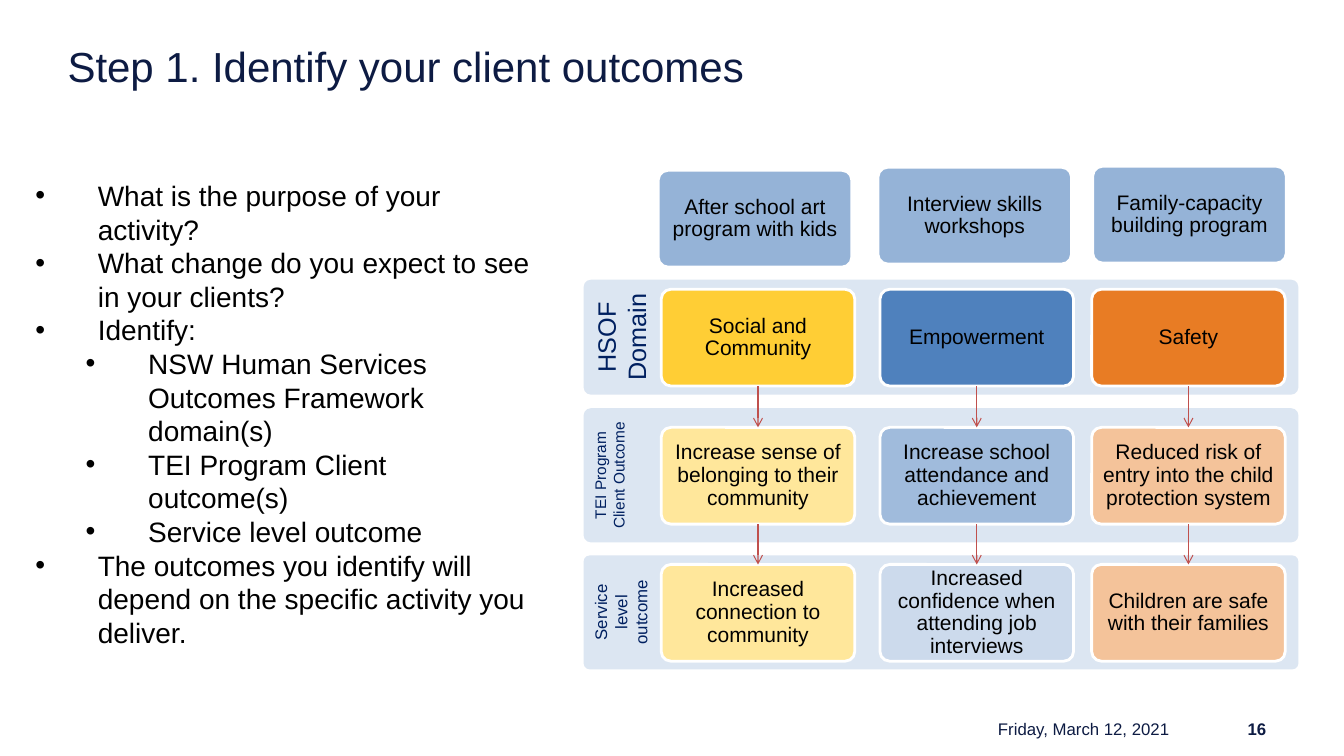
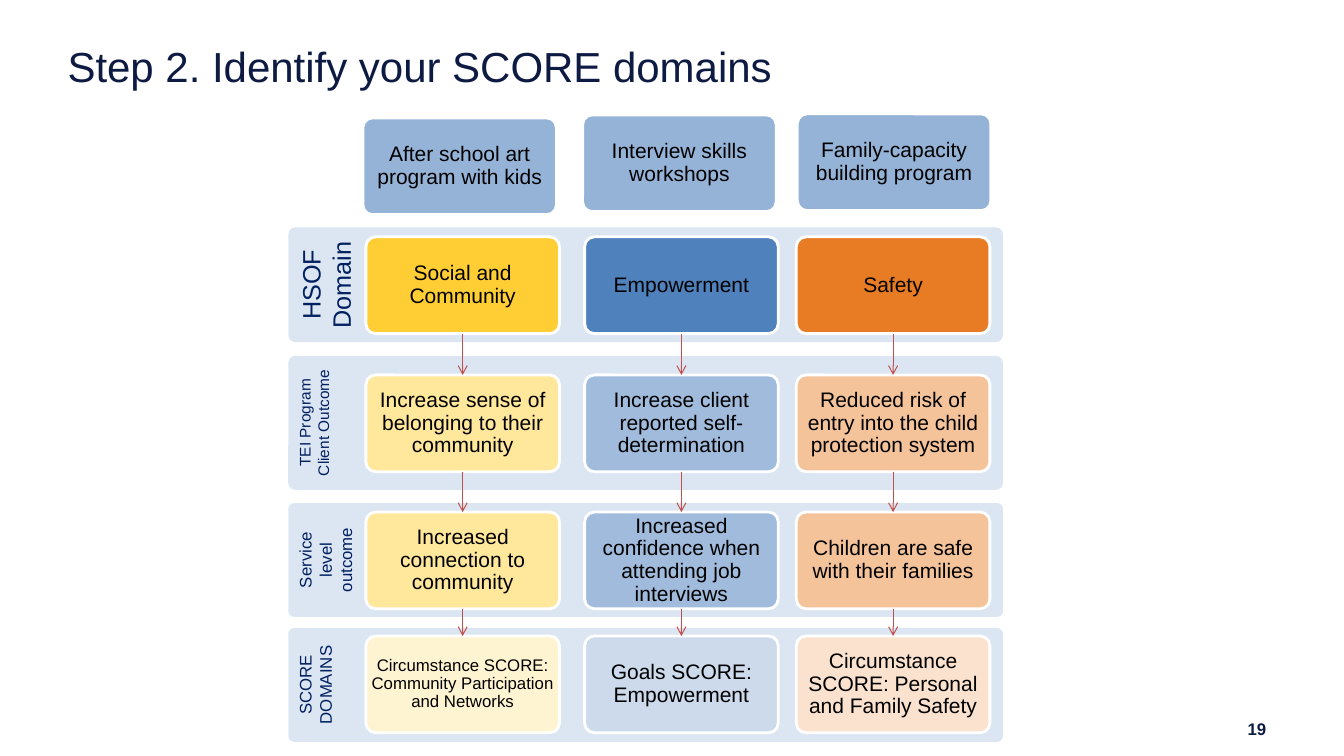
from dataclasses import dataclass
from typing import Any

from lxml.etree import SubElement
from pptx import Presentation
from pptx.dml.color import RGBColor
from pptx.enum.shapes import MSO_CONNECTOR as Link, MSO_SHAPE as Preset
from pptx.enum.text import MSO_ANCHOR as Anchor, MSO_AUTO_SIZE as Fit, PP_ALIGN as Align
from pptx.oxml.ns import qn
from pptx.util import Inches, Pt

CELL = Inches(0.1)
GRID_COLUMNS, GRID_ROWS = 133.33, 75
FONT = "Arial"
NAVY, LABEL, INK, WHITE = "0D1B43", "002060", "000000", "FFFFFF"
BAND, ACTIVITY, ARROW = "DCE6F2", "95B3D7", "C0504D"
YELLOW, YELLOW_MID, YELLOW_PALE = "FFCE35", "FFE79B", "FFF4D1"
BLUE, BLUE_MID, BLUE_PALE = "4F81BD", "A0BBDC", "CCDAEC"
ORANGE, ORANGE_MID, ORANGE_PALE = "E87C24", "F4C39A", "FAE2CE"

BAND_COLUMNS = 70.9
NODE_COLUMNS, NODE_ROWS = 19.2, 9.6
NODE_STARTS = (7.7, 29.4, 50.4)


@dataclass(frozen=True)
class Area:
    column: float
    row: float
    columns: float
    rows: float

    def lengths(self) -> tuple[int, ...]:
        return tuple(round(n * CELL) for n in (self.column, self.row, self.columns, self.rows))


@dataclass(frozen=True)
class Node:
    text: str
    fill: str
    size: float = 15


@dataclass(frozen=True)
class Level:
    label: str
    size: float
    band_row: float
    band_rows: float
    node_row: float
    nodes: tuple[Node, ...]
    radius: float = 0.052


@dataclass(frozen=True)
class Activity:
    text: str
    column: float
    row: float


@dataclass(frozen=True)
class Bullet:
    text: str
    level: int = 0


ACTIVITIES = (
    Activity("After school art program with kids", 7.4, 0.4),
    Activity("Interview skills workshops", 29.2, 0.1),
    Activity("Family-capacity building program", 50.5, 0),
)


def outcome_levels(client_outcome: str, confidence_fill: str) -> tuple[Level, ...]:
    return (
        Level("HSOF Domain", 18, 11.25, 11.4, 12.2, (
            Node("Social and Community", YELLOW),
            Node("Empowerment", BLUE),
            Node("Safety", ORANGE),
        ), 0.063),
        Level("TEI Program Client Outcome", 11, 24, 13.3, 25.9, (
            Node("Increase sense of belonging to their community", YELLOW_MID),
            Node(client_outcome, BLUE_MID),
            Node("Reduced risk of entry into the child protection system", ORANGE_MID),
        )),
        Level("Service level outcome", 12, 38.6, 11.3, 39.5, (
            Node("Increased connection to community", YELLOW_MID),
            Node("Increased confidence when attending job interviews", confidence_fill),
            Node("Children are safe with their families", ORANGE_MID),
        )),
    )


SCORE_LEVEL = Level("SCORE DOMAINS", 12, 51, 11.3, 51.8, (
    Node("Circumstance SCORE: Community Participation and Networks", YELLOW_PALE, 12),
    Node("Goals SCORE: Empowerment", BLUE_PALE),
    Node("Circumstance SCORE: Personal and Family Safety", ORANGE_PALE),
))

BULLETS = (
    Bullet("What is the purpose of your activity?"),
    Bullet("What change do you expect to see in your clients?"),
    Bullet("Identify:"),
    Bullet("NSW Human Services Outcomes Framework domain(s)", 1),
    Bullet("TEI Program Client outcome(s)", 1),
    Bullet("Service level outcome", 1),
    Bullet("The outcomes you identify will depend on the specific activity you deliver."),
)


def colour(code: str) -> RGBColor:
    return RGBColor.from_string(code)


def set_format(target: Any, values: dict[str, Any]) -> None:
    for name, value in values.items():
        setattr(target, name, value)


def margins(width: float) -> dict[str, int]:
    return {f"margin_{side}": Inches(width) for side in ("left", "top", "right", "bottom")}


def place(shape: Any, area: Area) -> None:
    set_format(shape, dict(zip(("left", "top", "width", "height"), area.lengths())))


def write(para: Any, text: str, size: float, code: str, bold: bool = False, **layout: Any) -> None:
    set_format(para, {"space_before": Pt(0), **layout})
    span = para.add_run()
    span.text = text
    set_format(span.font, {"name": FONT, "size": Pt(size), "bold": bold})
    span.font.color.rgb = colour(code)


def add_round_box(page: Any, area: Area, fill: str, radius: float) -> Any:
    box = page.shapes.add_shape(Preset.ROUNDED_RECTANGLE, *area.lengths())
    box.shadow.inherit = False
    box.adjustments[0] = radius
    box.fill.solid()
    box.fill.fore_color.rgb = colour(fill)
    box.line.fill.background()
    box.text_frame.word_wrap = True
    return box


def add_node(page: Any, column: float, row: float, node: Node) -> Any:
    box = add_round_box(page, Area(column, row, NODE_COLUMNS, NODE_ROWS), node.fill, 0.1)
    box.line.color.rgb = colour(WHITE)
    box.line.width = Pt(2)
    set_format(box.text_frame, {"vertical_anchor": Anchor.MIDDLE, **margins(0.01)})
    write(box.text_frame.paragraphs[0], node.text, node.size, INK,
          alignment=Align.CENTER, line_spacing=0.9)
    return box


def add_band(page: Any, column: float, row: float, level: Level) -> None:
    turn = (BAND_COLUMNS - level.band_rows) / 2
    area = Area(column + turn, row + level.band_row - turn, level.band_rows, BAND_COLUMNS)
    box = add_round_box(page, area, BAND, level.radius)
    box.rotation = 270
    box.text_frame.vertical_anchor = Anchor.TOP
    write(box.text_frame.paragraphs[0], level.label, level.size, LABEL, alignment=Align.CENTER)


def add_arrow(page: Any, upper: Any, lower: Any) -> None:
    arrow = page.shapes.add_connector(Link.STRAIGHT, 0, 0, 0, 0)
    arrow.begin_connect(upper, 2)
    arrow.end_connect(lower, 0)
    arrow.line.color.rgb = colour(ARROW)
    arrow.line.width = Pt(0.75)
    SubElement(arrow.line._get_or_add_ln(), qn("a:tailEnd"), type="arrow")
    SubElement(arrow._element.spPr, qn("a:effectLst"))


def add_diagram(page: Any, column: float, row: float, levels: tuple[Level, ...]) -> None:
    for activity in ACTIVITIES:
        add_node(page, column + activity.column, row + activity.row,
                 Node(activity.text, ACTIVITY))
    for level in levels:
        add_band(page, column, row, level)
    tiers = [
        [add_node(page, column + start, row + level.node_row, node)
         for start, node in zip(NODE_STARTS, level.nodes)]
        for level in levels
    ]
    for uppers, lowers in zip(tiers, tiers[1:]):
        for upper, lower in zip(uppers, lowers):
            add_arrow(page, upper, lower)


def add_footer(page: Any, area: Area, text: str, bold: bool = False) -> None:
    box = page.shapes.add_textbox(*area.lengths())
    set_format(box.text_frame, {"word_wrap": True, "vertical_anchor": Anchor.MIDDLE})
    write(box.text_frame.paragraphs[0], text, 12, NAVY, bold, alignment=Align.RIGHT)


def add_page(deck: Any, layout: int, title: str, number: str) -> Any:
    page = deck.slides.add_slide(deck.slide_layouts[layout])
    heading = page.shapes.title
    place(heading, Area(6.7, 4, 120, 6.6))
    set_format(heading.text_frame, {
        "word_wrap": True, "auto_size": Fit.NONE, "vertical_anchor": Anchor.TOP, **margins(0)})
    write(heading.text_frame.paragraphs[0], title, 30, NAVY, alignment=Align.LEFT)
    add_footer(page, Area(115.7, 71.2, 10.9, 2.3), number, True)
    return page


def add_bullets(page: Any, bullets: tuple[Bullet, ...]) -> None:
    body = page.placeholders[1]
    place(body, Area(2.5, 17.2, 51.4, 48.1))
    frame = body.text_frame
    set_format(frame, {
        "word_wrap": True, "auto_size": Fit.NONE, "vertical_anchor": Anchor.TOP})
    for index, bullet in enumerate(bullets):
        para = frame.add_paragraph() if index else frame.paragraphs[0]
        para.level = bullet.level
        props = para._p.get_or_add_pPr()
        props.set("marL", str(Inches(0.62 + 0.5 * bullet.level)))
        props.set("indent", str(-Inches(0.62)))
        SubElement(props, qn("a:buFont"), typeface=FONT)
        SubElement(props, qn("a:buChar"), char="•")
        write(para, bullet.text, 20, INK, alignment=Align.LEFT)


def main() -> None:
    deck = Presentation()
    set_format(deck, {
        "slide_width": round(GRID_COLUMNS * CELL), "slide_height": GRID_ROWS * CELL})

    outcomes = add_page(deck, 1, "Step 1. Identify your client outcomes", "16")
    add_footer(outcomes, Area(85.9, 71.2, 31.1, 2.3), "Friday, March 12, 2021")
    add_bullets(outcomes, BULLETS)
    add_diagram(outcomes, 57.9, 16.5,
                outcome_levels("Increase school attendance and achievement", BLUE_PALE))

    domains = add_page(deck, 5, "Step 2. Identify your SCORE domains", "19")
    add_diagram(domains, 28.6, 11.3, (
        *outcome_levels("Increase client reported self-determination", BLUE_MID), SCORE_LEVEL))

    deck.save("out.pptx")


if __name__ == "__main__":
    main()
